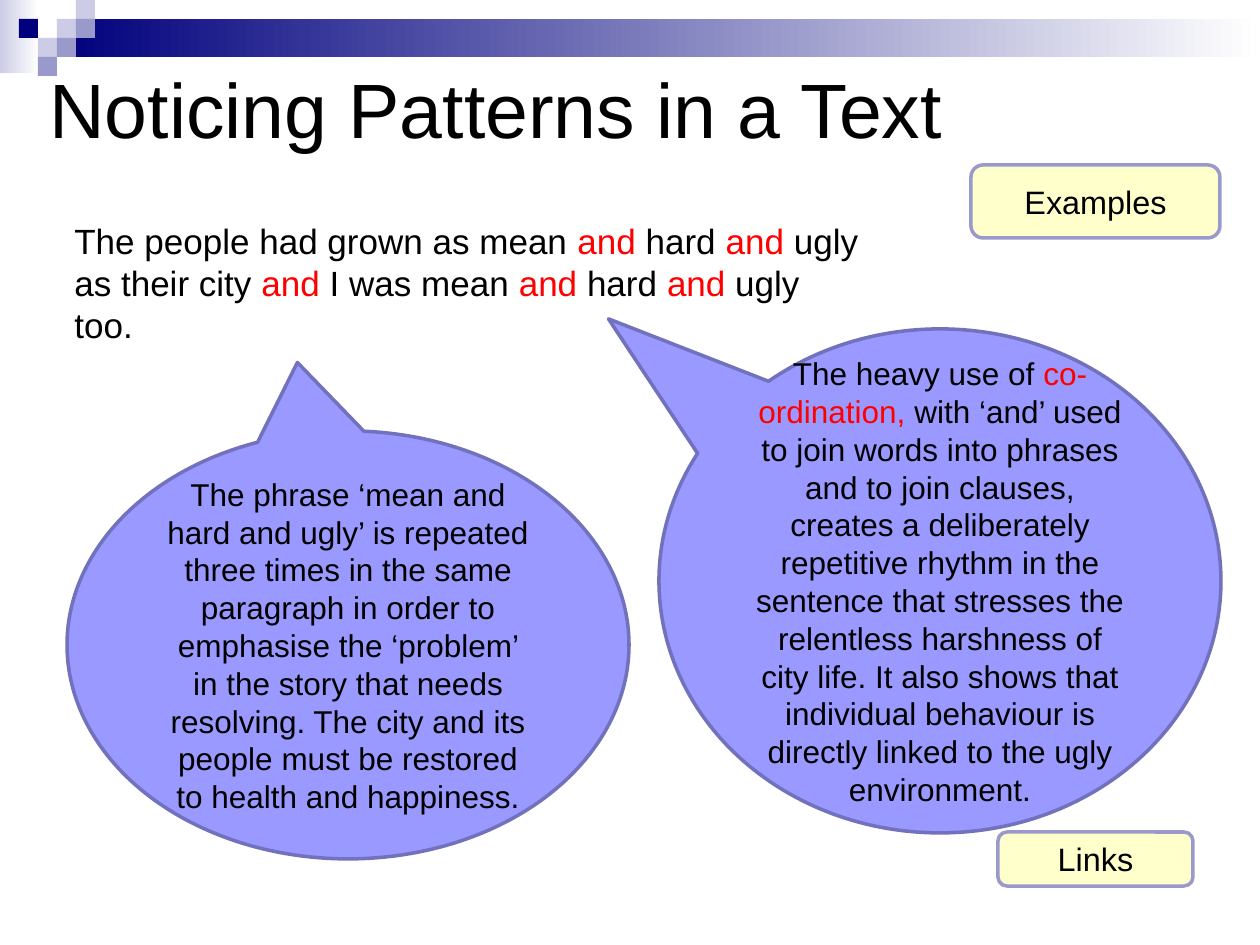
import pptx
import pptx.dml.color
import pptx.enum.shapes
import pptx.enum.text
import pptx.util

SCALE = 914400 / 126  # EMU in one px
FONT = "Arial"
BLACK, RED, WHITE = "000000", "FF0000", "FFFFFF"
NAVY, PALE, MID = "00007D", "CCCCE6", "9999CC"
SHAPES = pptx.enum.shapes.MSO_SHAPE


def emu(px):
    return pptx.util.Emu(round(px * SCALE))


def color(value):
    return pptx.dml.color.RGBColor.from_string(value)


class SlideBuilder:
    def __init__(self, slide):
        self.slide = slide

    def shape(self, kind, box, fill, line=None):
        shape = self.slide.shapes.add_shape(kind, *map(emu, box))
        shape.shadow.inherit = False
        shape.fill.solid()
        shape.fill.fore_color.rgb = color(fill)
        if line:
            shape.line.color.rgb = color(line)
            shape.line.width = pptx.util.Pt(2)
        else:
            shape.line.fill.background()
        return shape

    def gradient(self, box, start):
        shape = self.shape(SHAPES.RECTANGLE, box, start)
        shape.fill.gradient()
        shape.fill.gradient_angle = 0
        for stop, value, position in zip(shape.fill.gradient_stops, (start, WHITE), (0, 1)):
            stop.color.rgb = color(value)
            stop.position = position

    def fill_text(self, shape, runs, size, centered=True, middle=True):
        frame = shape.text_frame
        frame.word_wrap = True
        anchor = pptx.enum.text.MSO_ANCHOR
        frame.vertical_anchor = anchor.MIDDLE if middle else anchor.TOP
        paragraph = frame.paragraphs[0]
        align = pptx.enum.text.PP_ALIGN
        paragraph.alignment = align.CENTER if centered else align.LEFT
        paragraph.font.name = FONT
        paragraph.font.size = pptx.util.Pt(size)
        paragraph.font.color.rgb = color(BLACK)
        for text, value in runs:
            run = paragraph.add_run()
            run.text = text
            run.font.color.rgb = color(value)

    def text(self, box, runs, size, middle=False):
        shape = self.slide.shapes.add_textbox(*map(emu, box))
        self.fill_text(shape, runs, size, centered=False, middle=middle)

    def button(self, box, label):
        shape = self.shape(SHAPES.ROUNDED_RECTANGLE, box, "FFFFCC", MID)
        self.fill_text(shape, [(label, BLACK)], 18.5)

    def callout(self, box, tip, runs):
        shape = self.shape(SHAPES.OVAL_CALLOUT, box, "9999FF", "7171BD")
        shape.adjustments[0], shape.adjustments[1] = tip
        self.fill_text(shape, runs, 18)


def main():
    presentation = pptx.Presentation()
    presentation.slide_width, presentation.slide_height = emu(1260), emu(945)
    builder = SlideBuilder(presentation.slides.add_slide(presentation.slide_layouts[6]))

    # Header bands and checkered squares
    builder.gradient((0, 0, 39, 73), PALE)
    builder.gradient((57, 19, 1203, 38), NAVY)
    square = 19
    squares = [(3, 1, PALE), (4, 0, PALE), (4, 1, MID), (2, 2, PALE),
               (1, 1, NAVY), (3, 2, MID), (2, 3, MID)]
    for column, row, fill in squares:
        box = (column * square, row * square, square, square)
        builder.shape(SHAPES.RECTANGLE, box, fill)

    # Title and buttons
    builder.text((37, 21, 1134, 174), [("Noticing Patterns in a Text", BLACK)], 44, middle=True)
    builder.button((971, 165, 249, 73), "Examples")
    builder.button((998, 832, 195, 54), "Links")

    # Quotation with its conjunctions picked out
    builder.text((62, 213, 816, 97), [
        ("The people had grown as mean ", BLACK), ("and", RED), (" hard ", BLACK),
        ("and ", RED), ("ugly as their city ", BLACK), ("and ", RED),
        ("I was mean ", BLACK), ("and", RED), (" hard ", BLACK), ("and", RED),
        (" ugly too.", BLACK)], 20)

    # Commentary callouts
    builder.callout((659, 329, 562, 504), (-0.59, -0.52), [
        ("The heavy use of ", BLACK), ("co-ordination, ", RED),
        ("with ‘and’ used to join words into phrases and to join clauses, creates a "
         "deliberately repetitive rhythm in the sentence that stresses the relentless "
         "harshness of city life. It also shows that individual behaviour is directly "
         "linked to the ugly environment.", BLACK)])
    builder.callout((67, 431, 562, 428), (-0.09, -0.66), [
        ("The phrase ‘mean and hard and ugly’ is repeated three times in the same "
         "paragraph in order to emphasise the ‘problem’ in the story that needs "
         "resolving. The city and its people must be restored to health and "
         "happiness.", BLACK)])

    presentation.save("out.pptx")


if __name__ == "__main__":
    main()
